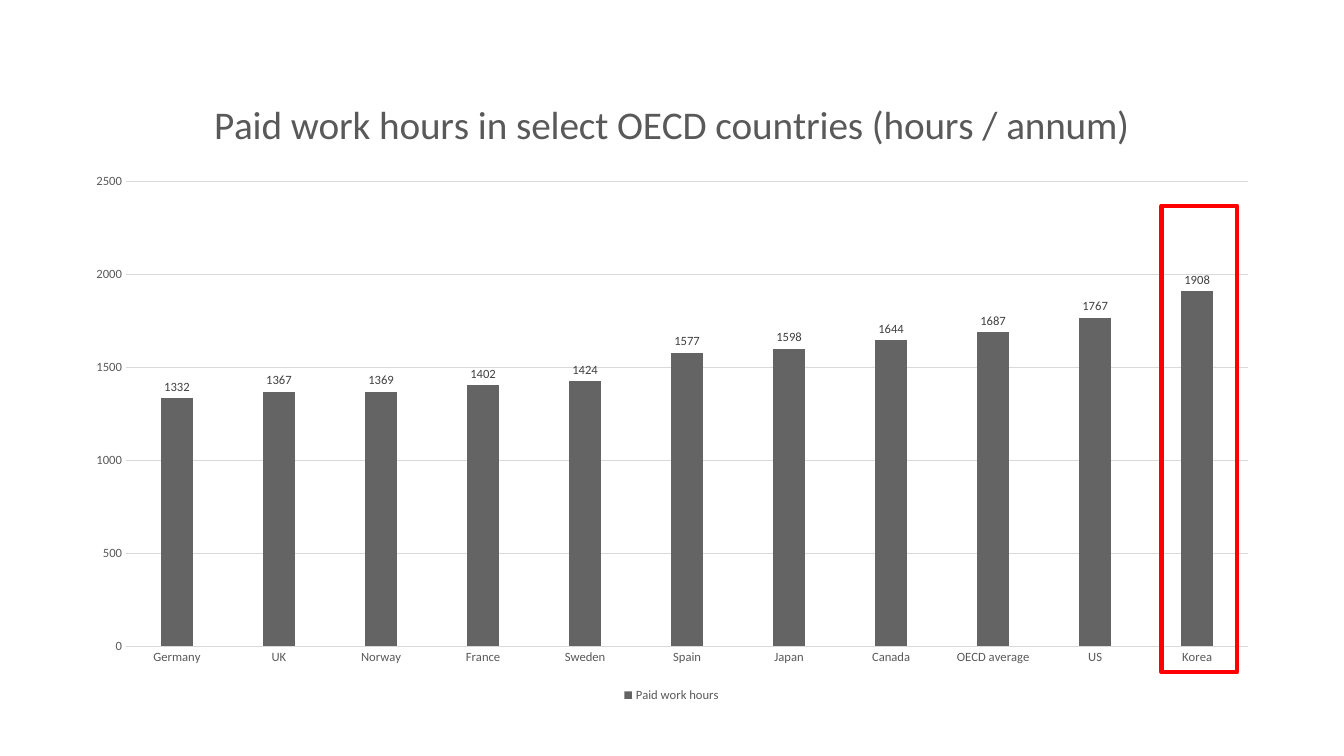
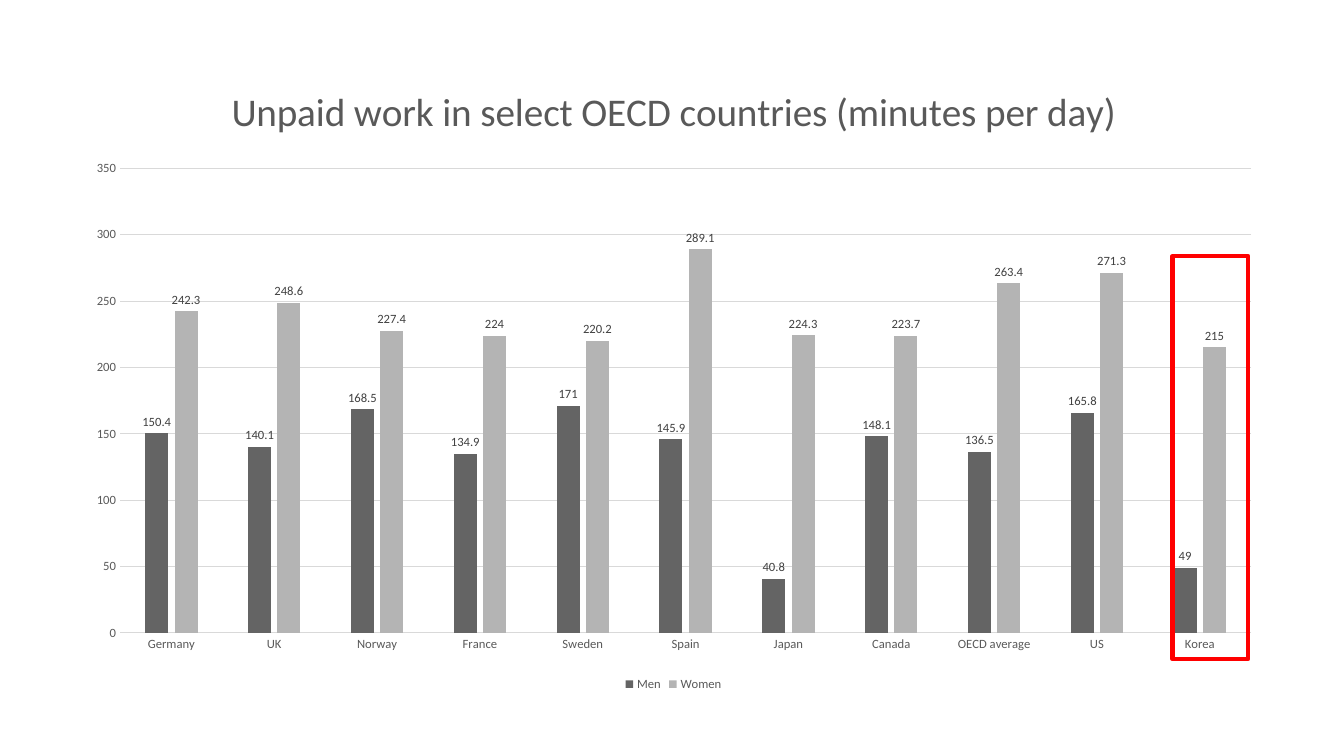
from lxml import etree
from pptx import Presentation
from pptx.chart.data import CategoryChartData
from pptx.dml.color import RGBColor
from pptx.enum.chart import XL_CHART_TYPE, XL_LABEL_POSITION, XL_LEGEND_POSITION, XL_TICK_MARK
from pptx.enum.shapes import MSO_SHAPE
from pptx.oxml.ns import qn
from pptx.util import Inches, Pt

COLUMNS = XL_CHART_TYPE.COLUMN_CLUSTERED
OUTSIDE_END = XL_LABEL_POSITION.OUTSIDE_END
BOTTOM = XL_LEGEND_POSITION.BOTTOM
NO_TICK = XL_TICK_MARK.NONE
RECTANGLE = MSO_SHAPE.RECTANGLE

FONT = "Calibri"
GRAY = RGBColor(0x59, 0x59, 0x59)
LABEL_GRAY = RGBColor(0x40, 0x40, 0x40)
GRID_GRAY = RGBColor(0xD9, 0xD9, 0xD9)
RED = RGBColor(0xFF, 0x00, 0x00)
SERIES_COLORS = (RGBColor(0x64, 0x64, 0x64), RGBColor(0xB4, 0xB4, 0xB4))

BLANK_LAYOUT = 6
PLOT_TOP, PLOT_HEIGHT, PLOT_RIGHT_MARGIN = 1.08, 4.61, 0.23

COUNTRIES = ("Germany", "UK", "Norway", "France", "Sweden", "Spain", "Japan",
             "Canada", "OECD average", "US", "Korea")
PAID_HOURS = {
    "Paid work hours": (1332, 1367, 1369, 1402, 1424, 1577, 1598, 1644, 1687, 1767, 1908),
}
UNPAID_MINUTES = {
    "Men": (150.4, 140.1, 168.5, 134.9, 171, 145.9, 40.8, 148.1, 136.5, 165.8, 49),
    "Women": (242.3, 248.6, 227.4, 224, 220.2, 289.1, 224.3, 223.7, 263.4, 271.3, 215),
}


def format_font(font, size=9, color=GRAY):
    """Set the typeface, size and colour of a font."""
    font.name = FONT
    font.size = Pt(size)
    font.bold = False
    font.color.rgb = color


def write_text(text_frame, text, **font_format):
    """Fill a text frame with one formatted run."""
    run = text_frame.paragraphs[0].add_run()
    run.text = text
    format_font(run.font, **font_format)


def format_line(line, color=GRID_GRAY, width=0.75):
    """Set the colour and width of a line."""
    line.color.rgb = color
    line.width = Pt(width)


def place_plot(chart, box, plot_left):
    """Fix the inner plot area within the chart box, in inches."""
    width, height = box[2:]
    plot_area = chart.plots[0]._element.getparent()
    layout = plot_area.find(qn("c:layout"))
    if layout is None:
        layout = etree.Element(qn("c:layout"))
        plot_area.insert(0, layout)
    manual = etree.SubElement(layout, qn("c:manualLayout"))
    settings = {
        "layoutTarget": "inner",
        "xMode": "edge",
        "yMode": "edge",
        "x": plot_left / width,
        "y": PLOT_TOP / height,
        "w": (width - plot_left - PLOT_RIGHT_MARGIN) / width,
        "h": PLOT_HEIGHT / height,
    }
    for name, value in settings.items():
        etree.SubElement(manual, qn(f"c:{name}")).set("val", str(value))


def format_axes(chart):
    """Style the category and value axes and the gridlines."""
    for axis in (chart.category_axis, chart.value_axis):
        axis.major_tick_mark = axis.minor_tick_mark = NO_TICK
        format_font(axis.tick_labels.font)
    format_line(chart.category_axis.format.line)
    chart.value_axis.format.line.fill.background()
    format_line(chart.value_axis.major_gridlines.format.line)


def format_columns(plot):
    """Style the columns and their value labels."""
    plot.gap_width = 219
    plot.overlap = -27
    plot.vary_by_categories = False
    for series, color in zip(plot.series, SERIES_COLORS):
        series.format.fill.solid()
        series.format.fill.fore_color.rgb = color
        labels = series.data_labels
        labels.show_value = True
        labels.position = OUTSIDE_END
        format_font(labels.font, color=LABEL_GRAY)


def add_column_chart(slide, box, title, series_values, plot_left):
    """Add a titled column chart of the countries."""
    data = CategoryChartData()
    data.categories = COUNTRIES
    for name, values in series_values.items():
        data.add_series(name, values)
    chart = slide.shapes.add_chart(COLUMNS, *map(Inches, box), data).chart
    chart.font.name = FONT
    chart.font.size = Pt(10)
    write_text(chart.chart_title.text_frame, title, size=28)
    chart.chart_title.include_in_layout = False
    chart.has_legend = True
    chart.legend.position = BOTTOM
    chart.legend.include_in_layout = False
    format_font(chart.legend.font)
    format_axes(chart)
    format_columns(chart.plots[0])
    place_plot(chart, box, plot_left)


def add_highlight(slide, box):
    """Add a red outline around one country."""
    shape = slide.shapes.add_shape(RECTANGLE, *map(Inches, box))
    shape.shadow.inherit = False
    shape.fill.background()
    format_line(shape.line, RED, 3)


def add_chart_slide(presentation, title, series_values, chart_box, plot_left, highlight_box):
    """Add a slide with a column chart and Korea outlined."""
    slide = presentation.slides.add_slide(presentation.slide_layouts[BLANK_LAYOUT])
    add_column_chart(slide, chart_box, title, series_values, plot_left)
    add_highlight(slide, highlight_box)


def main():
    """Build and save the presentation."""
    presentation = Presentation()
    presentation.slide_width = Inches(13.33)
    presentation.slide_height = Inches(7.5)
    add_chart_slide(presentation, "Paid work hours in select OECD countries (hours / annum)",
                    PAID_HOURS, (0.71, 0.72, 11.9, 6.29), 0.54, (11.52, 2.04, 0.75, 4.63))
    add_chart_slide(presentation, "Unpaid work in select OECD countries (minutes per day)",
                    UNPAID_MINUTES, (0.72, 0.59, 11.92, 6.31), 0.47, (11.63, 2.54, 0.75, 4))
    presentation.save("out.pptx")


if __name__ == "__main__":
    main()
